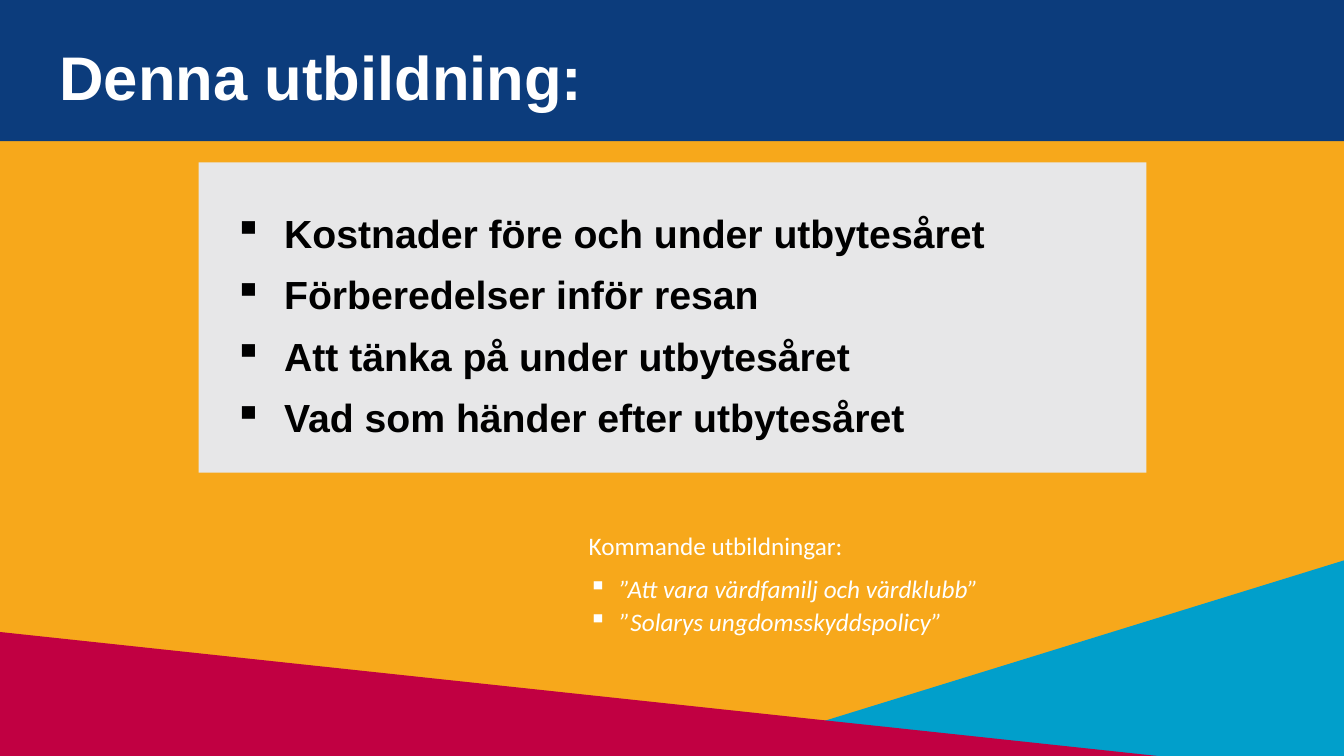
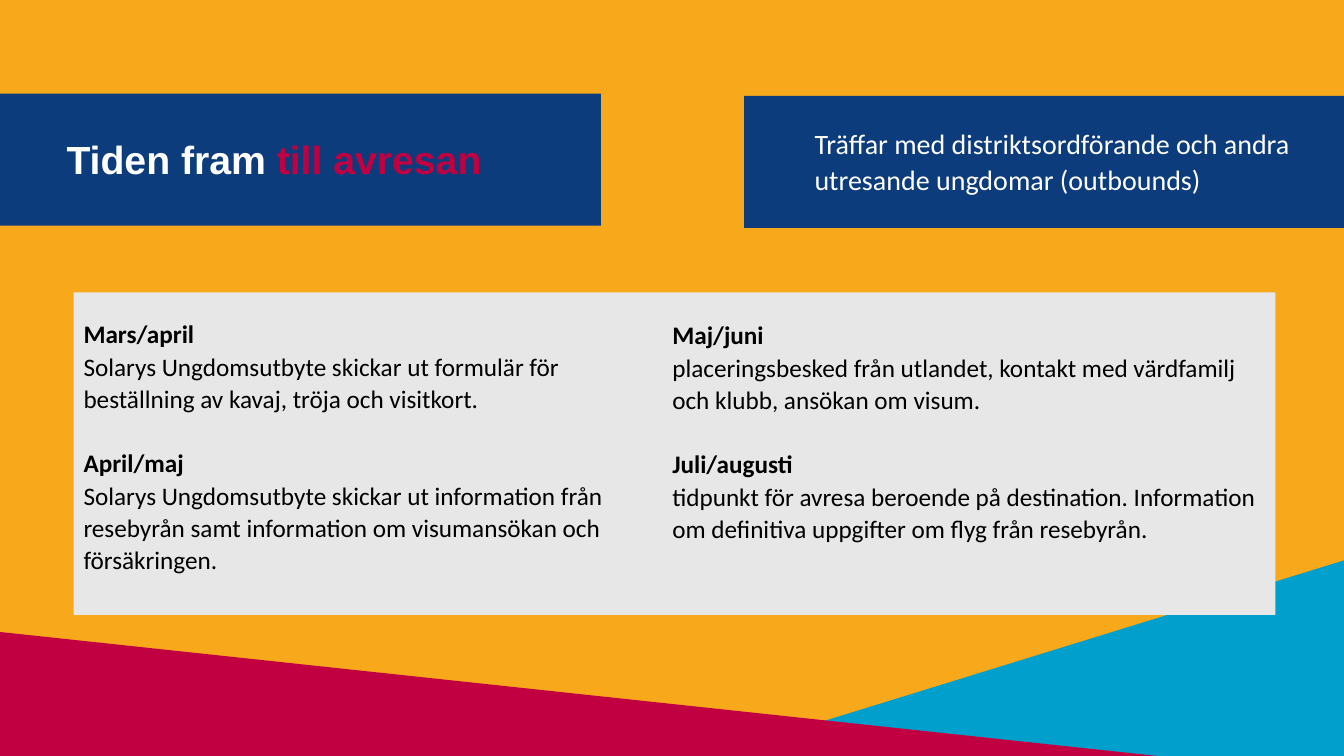
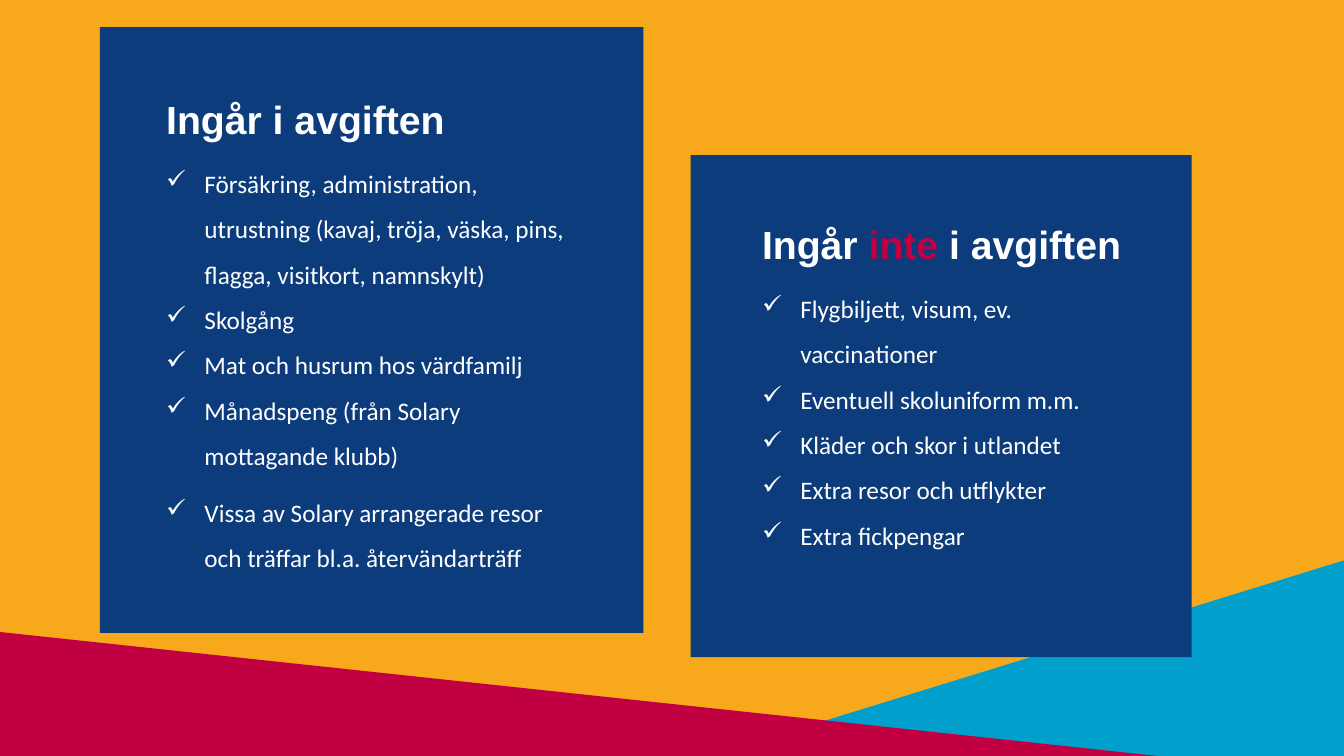
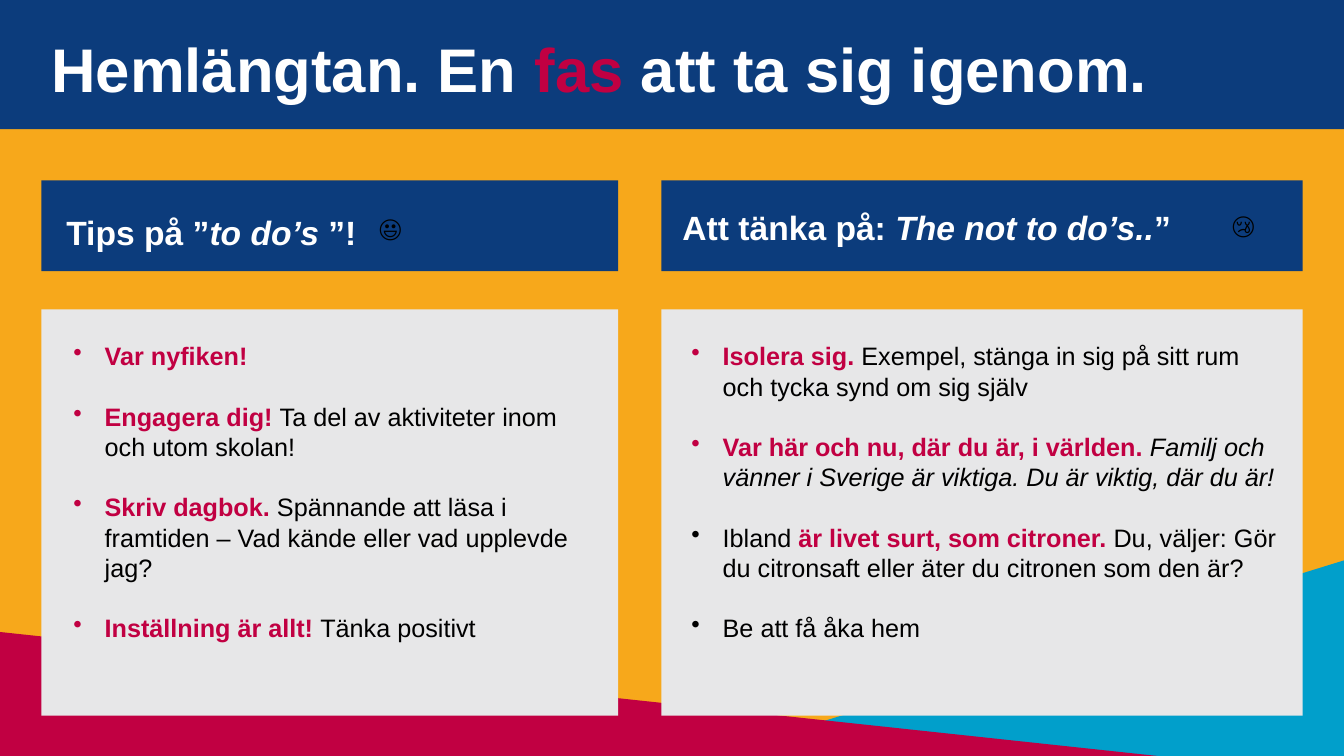
from dataclasses import dataclass

from lxml.etree import SubElement
from pptx import Presentation
from pptx.dml.color import RGBColor
from pptx.enum.shapes import MSO_SHAPE
from pptx.enum.text import MSO_ANCHOR, MSO_AUTO_SIZE, PP_ALIGN
from pptx.oxml.ns import qn
from pptx.util import Emu, Pt

PX = 9144  # EMU in one px, 100 px to the inch
WIDTH, HEIGHT = 1333, 750
TITLE_ONLY, BLANK = 5, 6


@dataclass(frozen=True)
class Theme:
    amber: str = "F7A81B"
    blue: str = "0C3C7C"
    sky: str = "019FCB"
    red: str = "C10042"
    grey: str = "E7E7E8"
    white: str = "FFFFFF"
    black: str = "000000"
    heading_font: str = "Arial"
    body_font: str = "Calibri"
    title_size: int = 44
    heading_size: int = 28
    subheading_size: int = 24
    lead_size: int = 20
    body_size: int = 18
    loose: float = 1.07   # usual line spacing
    after: int = 8        # usual space after a paragraph, pt


THEME = Theme()
TITLE = dict(size=THEME.title_size, font=THEME.heading_font, color=THEME.white, bold=True)
HEADING = dict(TITLE, size=THEME.heading_size, spacing=THEME.loose, after=THEME.after)
SUBHEADING = dict(HEADING, size=THEME.subheading_size)
BODY = dict(size=THEME.body_size, font=THEME.body_font, color=THEME.black)
STRONG = dict(color=THEME.red, bold=True)


def px(*lengths):
    return [Emu(length * PX) for length in lengths]


# Text

def write(frame, *runs, size, font, color, bold=False, italic=False,
          spacing=1.0, after=0, bullet=None, indent=0):
    """Add one paragraph; a run is a string or a (string, format changes) pair."""
    paragraph = frame.add_paragraph() if frame.text else frame.paragraphs[0]
    paragraph.alignment = PP_ALIGN.LEFT
    paragraph.line_spacing = spacing
    paragraph.space_before = Pt(0)
    paragraph.space_after = Pt(after)
    if bullet:
        properties = paragraph._p.get_or_add_pPr()
        properties.set("marL", str(indent * PX))
        properties.set("indent", str(-indent * PX))
        SubElement(properties, qn("a:buChar")).set("char", bullet)
    base = dict(size=size, font=font, color=color, bold=bold, italic=italic)
    for piece in runs:
        if piece == "\n":
            paragraph.add_line_break()
            continue
        text, changes = (piece, {}) if isinstance(piece, str) else piece
        look = {**base, **changes}
        run = paragraph.add_run()
        run.text = text
        run.font.size = Pt(look["size"])
        run.font.name = look["font"]
        run.font.bold = look["bold"]
        run.font.italic = look["italic"]
        run.font.color.rgb = RGBColor.from_string(look["color"])


def write_list(frame, items, spaced_items=1, **look):
    """Bulleted items, of which the last few have space after them."""
    for index, item in enumerate(items):
        spaced = index >= len(items) - spaced_items
        write(frame, item, after=THEME.after if spaced else 0, **look)


def prepare(frame):
    frame.word_wrap = True
    frame.auto_size = MSO_AUTO_SIZE.SHAPE_TO_FIT_TEXT
    frame.vertical_anchor = MSO_ANCHOR.TOP
    return frame


def text_area(slide, *box):
    return prepare(slide.shapes.add_textbox(*px(*box)).text_frame)


def title(slide, box, *runs, **look):
    heading = slide.shapes.title
    heading.left, heading.top, heading.width, heading.height = px(*box)
    heading.element.getparent().append(heading.element)  # in front of its band
    write(prepare(heading.text_frame), *runs, **look)


# Shapes

def block(slide, color, *box, kind=MSO_SHAPE.RECTANGLE):
    shape = slide.shapes.add_shape(kind, *px(*box))
    shape.shadow.inherit = False
    shape.fill.solid()
    shape.fill.fore_color.rgb = RGBColor.from_string(color)
    shape.line.fill.background()
    return shape


def new_slide(prs, layout=TITLE_ONLY):
    slide = prs.slides.add_slide(prs.slide_layouts[layout])
    corner = block(slide, THEME.sky, 705, 556, 628, 194, kind=MSO_SHAPE.RIGHT_TRIANGLE)
    corner.element.spPr.get_or_add_xfrm().set("flipH", "1")
    block(slide, THEME.red, 0, 627, 1148, 123, kind=MSO_SHAPE.RIGHT_TRIANGLE)
    return slide


# Slides

def contents_slide(prs):
    slide = new_slide(prs)

    coming = text_area(slide, 574, 519, 439, 117)
    look = dict(BODY, color=THEME.white, spacing=THEME.loose)
    write(coming, "Kommande utbildningar:", after=THEME.after, **look)
    write_list(coming, ["”Att vara värdfamilj och värdklubb”", "”Solarys ungdomsskyddspolicy”"],
               italic=True, bullet="▪", indent=31, **look)

    block(slide, THEME.grey, 197, 161, 940, 308)
    topics = text_area(slide, 222, 199, 889, 243)
    for topic in ("Kostnader före och under utbytesåret", "Förberedelser inför resan",
                  "Att tänka på under utbytesåret", "Vad som händer efter utbytesåret"):
        write(topics, topic, bullet="▪", indent=50, **{**HEADING, "color": THEME.black})

    block(slide, THEME.blue, 0, -1, WIDTH, 141)
    title(slide, (49, 34, 578, 84), "Denna utbildning:", **TITLE)


def departure_slide(prs):
    slide = new_slide(prs)

    # Timetable in two columns
    block(slide, THEME.grey, 73, 290, 1192, 320)
    columns = [
        ((73, 309, 578, 268), [
            ("Mars/april", "Solarys Ungdomsutbyte skickar ut formulär för beställning av kavaj, "
                           "tröja och visitkort."),
            ("April/maj", "Solarys Ungdomsutbyte skickar ut information från resebyrån samt "
                          "information om visumansökan och försäkringen.")]),
        ((657, 310, 607, 278), [
            ("Maj/juni", "placeringsbesked från utlandet, kontakt med värdfamilj och klubb, "
                         "ansökan om visum."),
            ("Juli/augusti", "tidpunkt för avresa beroende på destination. Information om "
                             "definitiva uppgifter om flyg från resebyrån.")]),
    ]
    for box, periods in columns:
        column = text_area(slide, *box)
        for months, events in periods:
            write(column, (months, dict(bold=True)), "\n", events,
                  spacing=THEME.loose, after=23, **BODY)

    # Two headings
    block(slide, THEME.blue, 0, 93, 596, 131)
    title(slide, (56, 126, 517, 58), "Tiden fram ", ("till avresan", STRONG), **HEADING)
    block(slide, THEME.blue, 738, 95, 596, 131)
    meetings = text_area(slide, 798, 118, 518, 81)
    write(meetings, "Träffar med distriktsordförande och andra utresande ungdomar (outbounds)",
          size=THEME.lead_size, font=THEME.body_font, color=THEME.white,
          spacing=THEME.loose, after=THEME.after)


def fee_slide(prs):
    slide = new_slide(prs, BLANK)
    cards = [
        ((685, 154, 497, 498), (746, 210, 397, 386),
         ["Ingår ", ("inte", STRONG), " i avgiften"], 1,
         ["Flygbiljett, visum, ev. vaccinationer", "Eventuell skoluniform m.m.",
          "Kläder och skor i utlandet", "Extra resor och utflykter", "Extra fickpengar"]),
        ((99, 27, 539, 601), (155, 86, 420, 533),
         ["Ingår i avgiften"], 2,
         ["Försäkring, administration, utrustning (kavaj, tröja, väska, pins, flagga, "
          "visitkort, namnskylt)", "Skolgång", "Mat och husrum hos värdfamilj",
          "Månadspeng (från Solary mottagande klubb)",
          "Vissa av Solary arrangerade resor och träffar bl.a. återvändarträff"]),
    ]
    for card, box, heading, spaced_items, items in cards:
        block(slide, THEME.blue, *card)
        area = text_area(slide, *box)
        write(area, *heading, **HEADING)
        write_list(area, items, spaced_items, bullet="✓", indent=38, spacing=1.5,
                   **{**BODY, "color": THEME.white})


def homesick_slide(prs):
    slide = new_slide(prs)
    block(slide, THEME.blue, 0, -1, WIDTH, 129)
    title(slide, (41, 26, 1162, 84),
          "Hemlängtan. En ", ("fas ", STRONG), "att ta sig igenom.", **TITLE)

    slanted = dict(italic=True)
    columns = [
        (41, 572, (56, 202, 310, 51), ["Tips på ”", ("to do’s ", slanted), "”!"],
         (366, 206, 54, 40), "😃", (63, 333, 528, 313), [
             [("Var nyfiken!", STRONG)],
             [("Engagera dig! ", STRONG), "Ta del av aktiviteter inom och utom skolan!"],
             [("Skriv dagbok. ", STRONG),
              "Spännande att läsa i framtiden – Vad kände eller vad upplevde jag?"],
             [("Inställning är allt! ", STRONG), "Tänka positivt"]]),
        (656, 636, (667, 198, 519, 51),
         ["Att tänka på:", (" The not to do’s..", slanted), "”"],
         (1212, 203, 61, 40), "😢", (676, 333, 607, 353), [
             [("Isolera sig. ", STRONG),
              "Exempel, stänga in sig på sitt rum och tycka synd om sig själv"],
             [("Var här och nu, där du är, i världen. ", STRONG),
              ("Familj och vänner i Sverige är viktiga. Du är viktig, där du är!", slanted)],
             ["Ibland ", ("är livet surt, som citroner. ", STRONG),
              "Du, väljer: Gör du citronsaft eller äter du citronen som den är?"],
             ["Be att få åka hem"]]),
    ]
    for left, width, heading_box, heading, mood_box, mood, advice_box, advice in columns:
        block(slide, THEME.blue, left, 179, width, 90)
        write(text_area(slide, *heading_box), *heading, **SUBHEADING)
        write(text_area(slide, *mood_box), mood, **BODY)
        block(slide, THEME.grey, left, 307, width, 403)
        tips = text_area(slide, *advice_box)
        for tip in advice:
            write(tips, *tip, bullet="•", indent=31, after=21.6,
                  **{**BODY, "font": THEME.heading_font})


def main():
    prs = Presentation()
    prs.slide_width, prs.slide_height = px(WIDTH, HEIGHT)
    backdrop = prs.slide_master.background.fill
    backdrop.solid()
    backdrop.fore_color.rgb = RGBColor.from_string(THEME.amber)

    contents_slide(prs)
    departure_slide(prs)
    fee_slide(prs)
    homesick_slide(prs)
    prs.save("out.pptx")


if __name__ == "__main__":
    main()
